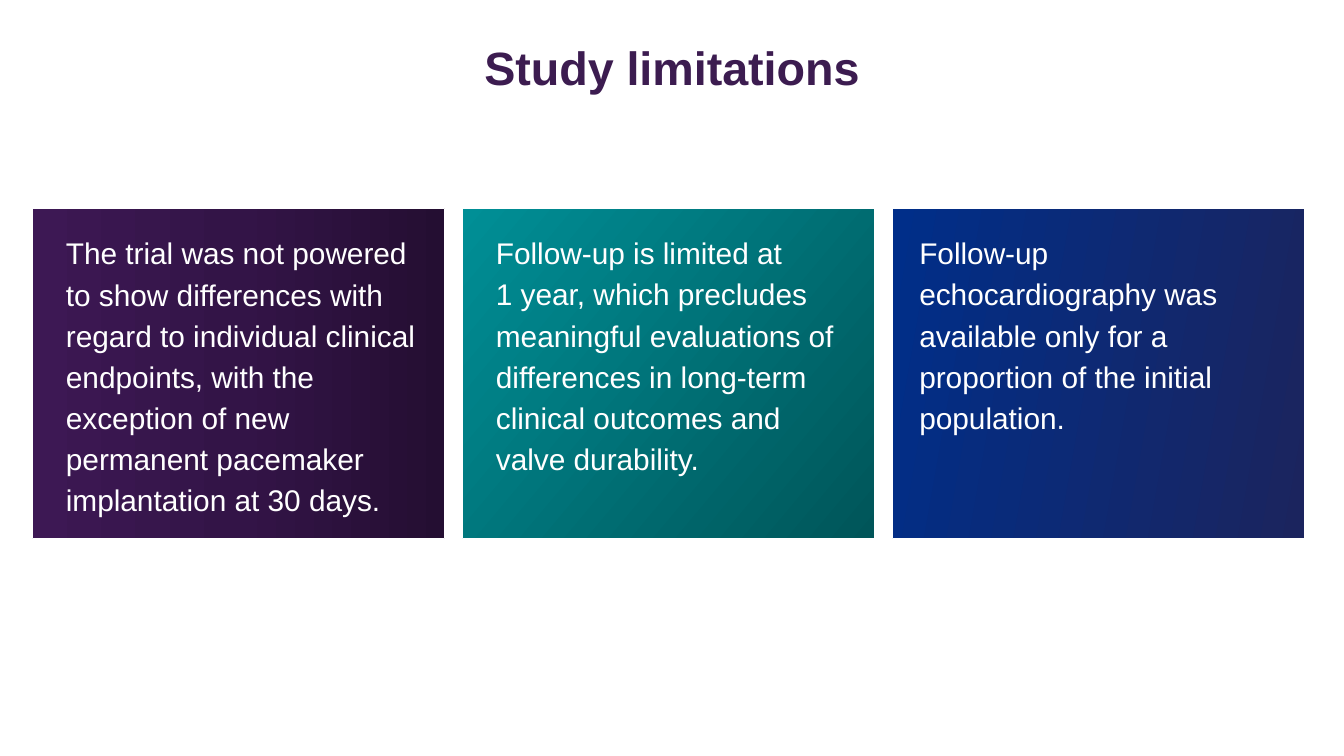
from copy import deepcopy

from lxml.etree import SubElement
from pptx import Presentation
from pptx.dml.color import RGBColor
from pptx.enum.shapes import MSO_SHAPE as Shape
from pptx.enum.text import MSO_ANCHOR as Anchor, PP_ALIGN as Align
from pptx.oxml.ns import qn
from pptx.util import Pt

WHITE = RGBColor(0xFF, 0xFF, 0xFF)
PLUM = RGBColor(0x3C, 0x1C, 0x50)
PURPLES = [RGBColor(0x24, 0x0E, 0x32), RGBColor(0x33, 0x14, 0x47), RGBColor(0x3D, 0x18, 0x54)]
TEALS = [RGBColor(0x00, 0x55, 0x59), RGBColor(0x00, 0x8F, 0x96)]
BLUES = [RGBColor(0x00, 0x2E, 0x89), RGBColor(0x1B, 0x24, 0x5E)]

TITLE_FORMAT = {"name": "Arial", "size": Pt(25), "bold": True}
BODY_FORMAT = {"name": "Arial", "size": Pt(16), "bold": False}

PANEL_LEFT, PANEL_TOP, PANEL_PITCH = 17.28, 111.6, 230.4
PANEL_WIDTH, PANEL_HEIGHT = 221.04, 177.12
TEXT_TOP = 119.52

LIMITATIONS = [
    {"text": "The trial was not powered to show differences with regard to individual "
             "clinical endpoints, with the exception of new permanent pacemaker "
             "implantation at 30 days.",
     "colors": PURPLES, "angle": 180, "inset": 3.6, "width": 217.44, "height": 154.8},
    {"text": "Follow-up is limited at \v1 year, which precludes meaningful evaluations "
             "of differences in long-term clinical outcomes and valve durability.",
     "colors": TEALS, "angle": 140, "inset": 3.6, "width": 213.84, "height": 133.92},
    {"text": "Follow-up echocardiography was available only for a proportion of the "
             "initial population.",
     "colors": BLUES, "angle": 350, "inset": 0, "width": 218.16, "height": 112.32},
]


def add_text(page, text, bounds, margins, font_format, color, spacing,
             align=Align.LEFT, anchor=Anchor.TOP):
    box = page.shapes.add_textbox(*map(Pt, bounds))
    frame = box.text_frame
    frame_format = {"word_wrap": True, "vertical_anchor": anchor,
                    "margin_left": Pt(margins[0]), "margin_right": Pt(margins[1]),
                    "margin_top": Pt(3.6), "margin_bottom": Pt(3.6)}
    for name, value in frame_format.items():
        setattr(frame, name, value)
    para = frame.paragraphs[0]
    para.text = text
    para.alignment = align
    para.line_spacing = spacing
    for span in para.runs:
        for name, value in font_format.items():
            setattr(span.font, name, value)
        span.font.color.rgb = color
    for line_break in para._p.findall(qn("a:br")):
        SubElement(line_break, qn("a:rPr"), sz=str(int(font_format["size"].pt * 100)))


def fill_gradient(shape, colors, angle):
    shape.fill.gradient()
    shape.fill.gradient_angle = angle
    stop_list = shape._element.spPr.find(qn("a:gradFill")).find(qn("a:gsLst"))
    while len(stop_list) < len(colors):
        stop_list.append(deepcopy(stop_list[-1]))
    for index, (stop, color) in enumerate(zip(shape.fill.gradient_stops, colors)):
        stop.position = index / (len(colors) - 1)
        stop.color.rgb = color


def add_panel(page, left, limitation):
    panel = page.shapes.add_shape(Shape.RECTANGLE, Pt(left), Pt(PANEL_TOP),
                                  Pt(PANEL_WIDTH), Pt(PANEL_HEIGHT))
    panel.shadow.inherit = False
    fill_gradient(panel, limitation["colors"], limitation["angle"])
    panel.line.color.rgb = WHITE
    panel.line.width = Pt(0.75)
    bounds = (left + limitation["inset"], TEXT_TOP, limitation["width"], limitation["height"])
    add_text(page, limitation["text"], bounds, (14.4, 10.8), BODY_FORMAT, WHITE, 1.15)


def main():
    deck = Presentation()
    deck.slide_width, deck.slide_height = Pt(720), Pt(405)
    page = deck.slides.add_slide(deck.slide_layouts[6])
    add_text(page, "Study limitations", (54, 15.12, 612, 44.64), (3.6, 3.6),
             TITLE_FORMAT, PLUM, 0.9, Align.CENTER, Anchor.MIDDLE)
    for index, limitation in enumerate(LIMITATIONS):
        add_panel(page, PANEL_LEFT + index * PANEL_PITCH, limitation)
    deck.save("out.pptx")


if __name__ == "__main__":
    main()
